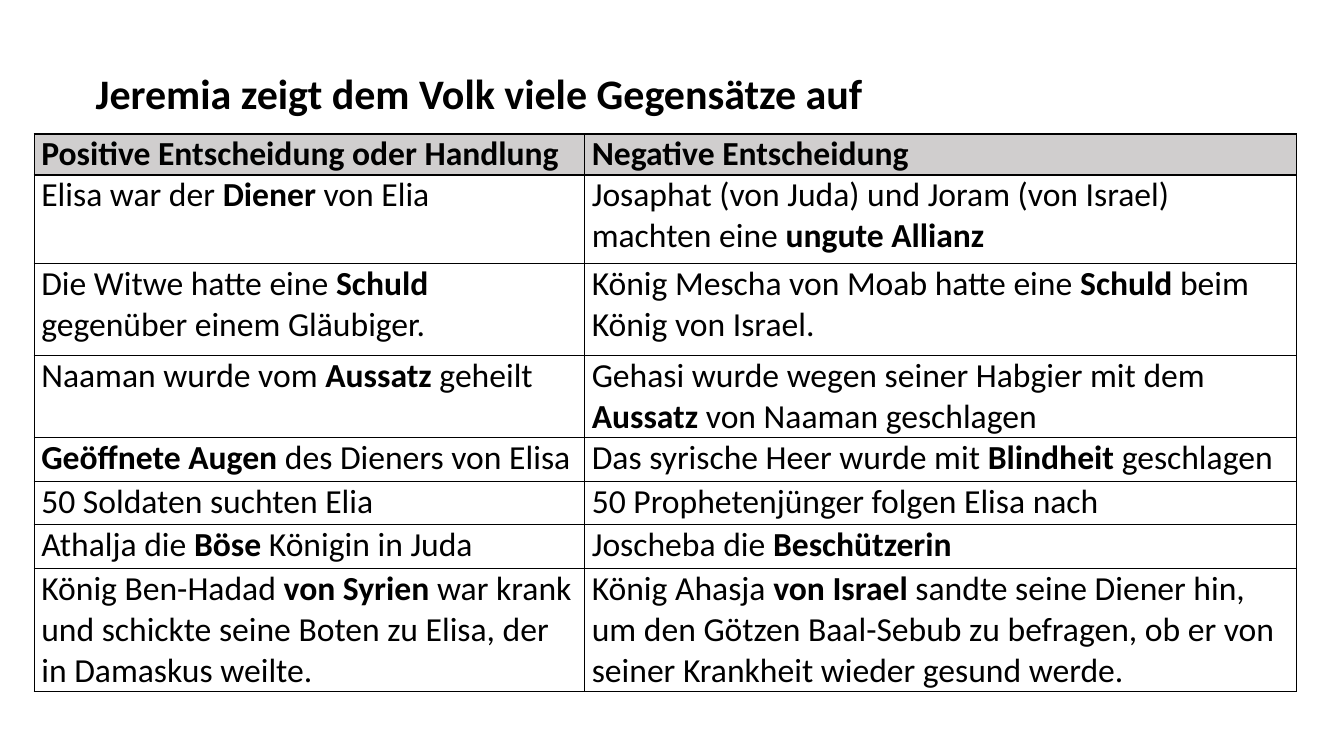
from lxml.etree import SubElement
from pptx import Presentation
from pptx.dml.color import RGBColor
from pptx.oxml.ns import qn
from pptx.util import Pt

TITLE = "Jeremia zeigt dem Volk viele Gegensätze auf"
# Words between double asterisks are bold.
ROWS = [
    ("**Positive Entscheidung oder Handlung**", "**Negative Entscheidung**"),
    ("Elisa war der **Diener** von Elia",
     "Josaphat (von Juda) und Joram (von Israel) machten eine **ungute Allianz**"),
    ("Die Witwe hatte eine **Schuld** gegenüber einem Gläubiger.",
     "König Mescha von Moab hatte eine **Schuld** beim König von Israel."),
    ("Naaman wurde vom **Aussatz** geheilt",
     "Gehasi wurde wegen seiner Habgier mit dem **Aussatz** von Naaman geschlagen"),
    ("**Geöffnete Augen** des Dieners von Elisa",
     "Das syrische Heer wurde mit **Blindheit** geschlagen"),
    ("50 Soldaten suchten Elia", "50 Prophetenjünger folgen Elisa nach"),
    ("Athalja die **Böse** Königin in Juda", "Joscheba die **Beschützerin**"),
    ("König Ben-Hadad **von Syrien **war krank und schickte seine Boten zu Elisa, "
     "der in Damaskus weilte.",
     "König Ahasja **von Israel **sandte seine Diener hin, um den Götzen Baal-Sebub "
     "zu befragen, ob er von seiner Krankheit wieder gesund werde."),
]

PX = 9144  # 100 px to the inch
SLIDE_SIZE = (1333, 750)
TITLE_BOX = (85, 59, 1105, 62)
TABLE_LEFT, TABLE_TOP = 34, 133
COLUMN_WIDTHS = (546, 706)
ROW_HEIGHTS = (34, 88, 91, 68, 44, 42, 44, 102)
CELL_MARGIN = 7
COLORS = {"text": "000000", "border": "000000", "header": "D0CECE"}
FONT = "Calibri"


def px(length):
    return length * PX


def write_marked(paragraph, marked_text, size):
    """Write text whose **marked** parts are bold."""
    for index, part in enumerate(marked_text.split("**")):
        if part:
            run = paragraph.add_run()
            run.text = part
            run.font.name = FONT
            run.font.size = Pt(size)
            run.font.bold = index % 2 == 1
            run.font.color.rgb = RGBColor.from_string(COLORS["text"])


def add_borders(cell):
    properties = cell._tc.get_or_add_tcPr()
    for position, side in enumerate(("a:lnL", "a:lnR", "a:lnT", "a:lnB")):
        line = SubElement(properties, qn(side), w=str(Pt(1)))
        fill = SubElement(line, qn("a:solidFill"))
        SubElement(fill, qn("a:srgbClr"), val=COLORS["border"])
        properties.insert(position, line)


def add_title(slide):
    frame = slide.shapes.add_textbox(*map(px, TITLE_BOX)).text_frame
    frame.word_wrap = True
    paragraph = frame.paragraphs[0]
    paragraph.line_spacing = 1.07
    paragraph.space_before = Pt(12)
    write_marked(paragraph, f"**{TITLE}**", 30)


def add_comparison(slide):
    table = slide.shapes.add_table(
        len(ROWS), len(COLUMN_WIDTHS), px(TABLE_LEFT), px(TABLE_TOP),
        px(sum(COLUMN_WIDTHS)), px(sum(ROW_HEIGHTS))).table
    table.horz_banding = False
    for column, width in zip(table.columns, COLUMN_WIDTHS):
        column.width = px(width)
    for row_index, (row, height) in enumerate(zip(table.rows, ROW_HEIGHTS)):
        row.height = px(height)
        for cell, text in zip(row.cells, ROWS[row_index]):
            cell.margin_left = cell.margin_right = px(CELL_MARGIN)
            cell.margin_top = cell.margin_bottom = 0
            if row_index == 0:
                cell.fill.solid()
                cell.fill.fore_color.rgb = RGBColor.from_string(COLORS["header"])
            else:
                cell.fill.background()
            add_borders(cell)
            write_marked(cell.text_frame.paragraphs[0], text, 24)


def main():
    presentation = Presentation()
    presentation.slide_width, presentation.slide_height = map(px, SLIDE_SIZE)
    slide = presentation.slides.add_slide(presentation.slide_layouts[6])
    add_comparison(slide)
    add_title(slide)
    presentation.save("out.pptx")


if __name__ == "__main__":
    main()
